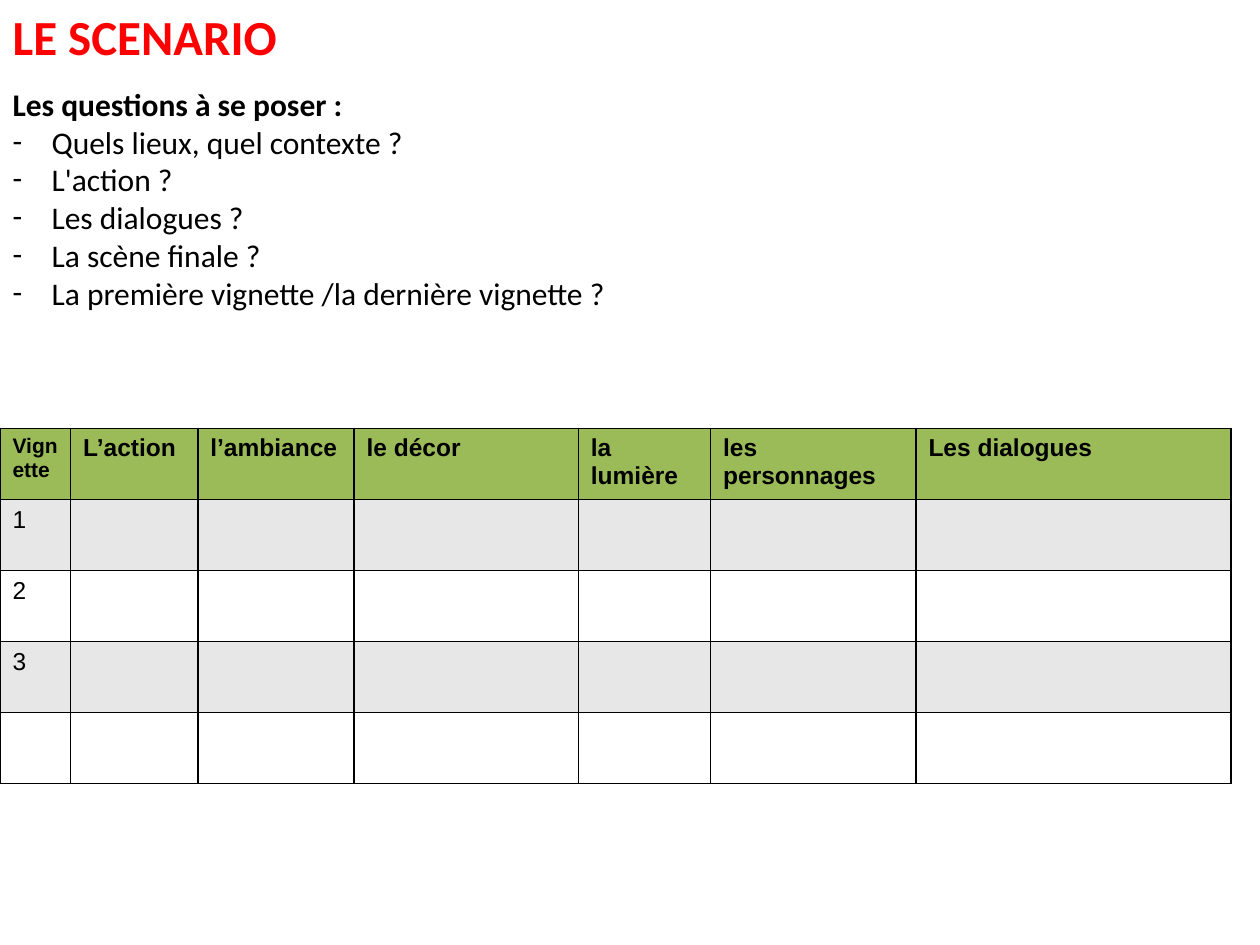
from dataclasses import dataclass

from lxml.etree import SubElement
from pptx import Presentation
from pptx.dml.color import RGBColor
from pptx.enum.text import MSO_ANCHOR, MSO_AUTO_SIZE, PP_ALIGN
from pptx.oxml.ns import qn
from pptx.util import Inches, Pt


@dataclass(frozen=True)
class Theme:
    title_color: str = "FF0000"
    ink: str = "000000"
    header_fill: str = "9BBB59"
    band_fills: tuple = ("E7E7E7", "FFFFFF")
    text_font: str = "Calibri"
    table_font: str = "Arial"
    title_size: int = 28
    body_size: int = 18
    header_size: int = 14
    narrow_header_size: int = 12
    border_width: int = 1


THEME = Theme()
SLIDE_WIDTH, SLIDE_HEIGHT = Inches(10), Inches(7.5)
HANGING_INDENT = Inches(0.31)

QUESTIONS_HEADING = "Les questions à se poser :"
QUESTIONS = [
    "Quels lieux, quel contexte ?",
    "L'action ?",
    "Les dialogues ?",
    "La scène finale ?",
    "La première vignette /la dernière vignette ?",
]
STORYBOARD_COLUMNS = {
    "Vignette": 0.56,
    "L’action": 1.01,
    "l’ambiance": 1.24,
    "le décor": 1.78,
    "la lumière": 1.05,
    "les personnages": 1.63,
    "Les dialogues": 2.5,
}
VIGNETTE_LABELS = ["1", "2", "3", ""]


def set_values(target, values):
    for attribute, value in values.items():
        setattr(target, attribute, value)


def place(placeholder, left, top, width, height):
    set_values(placeholder, {
        "left": int(left * SLIDE_WIDTH),
        "top": int(top * SLIDE_HEIGHT),
        "width": int(width * SLIDE_WIDTH),
        "height": int(height * SLIDE_HEIGHT),
    })
    set_values(placeholder.text_frame, {
        "word_wrap": True,
        "auto_size": MSO_AUTO_SIZE.NONE,
        "vertical_anchor": MSO_ANCHOR.TOP,
    })


def write(paragraph, text, font, size, color, bold=False):
    set_values(paragraph, {
        "alignment": PP_ALIGN.LEFT,
        "space_before": Pt(0),
        "line_spacing": 1.0,
    })
    run = paragraph.add_run()
    run.text = text
    set_values(run.font, {"name": font, "size": Pt(size), "bold": bold})
    run.font.color.rgb = RGBColor.from_string(color)


def set_bullet(paragraph, mark=None):
    properties = paragraph._p.get_or_add_pPr()
    indent = HANGING_INDENT if mark else 0
    properties.set("marL", str(indent))
    properties.set("indent", str(-indent))
    if mark:
        SubElement(properties, qn("a:buFont"), typeface=THEME.text_font)
        SubElement(properties, qn("a:buChar"), char=mark)
    else:
        SubElement(properties, qn("a:buNone"))


def add_title(slide):
    title = slide.shapes.title
    place(title, 0, 0, 0.343, 0.076)
    write(title.text_frame.paragraphs[0], "LE SCENARIO", THEME.text_font,
          THEME.title_size, THEME.title_color, bold=True)


def add_questions(slide):
    questions = slide.placeholders[1]
    place(questions, 0, 0.083, 0.971, 0.256)
    frame = questions.text_frame
    heading = frame.paragraphs[0]
    set_bullet(heading)
    write(heading, QUESTIONS_HEADING, THEME.text_font, THEME.body_size,
          THEME.ink, bold=True)
    for question in QUESTIONS:
        item = frame.add_paragraph()
        set_bullet(item, "-")
        write(item, question, THEME.text_font, THEME.body_size, THEME.ink)


def format_cell(cell, fill):
    properties = cell._tc.get_or_add_tcPr()
    for side in ("lnL", "lnR", "lnT", "lnB"):
        border = SubElement(properties, qn(f"a:{side}"),
                            w=str(Pt(THEME.border_width)))
        paint = SubElement(border, qn("a:solidFill"))
        SubElement(paint, qn("a:srgbClr"), val=THEME.ink)
    cell.fill.solid()
    cell.fill.fore_color.rgb = RGBColor.from_string(fill)


def add_storyboard(slide):
    widths = [Inches(width) for width in STORYBOARD_COLUMNS.values()]
    row_count = len(VIGNETTE_LABELS) + 1
    storyboard = slide.shapes.add_table(
        row_count, len(widths), 0, Inches(3.4), sum(widths), Inches(2.82)
    ).table
    for column, width in zip(storyboard.columns, widths):
        column.width = width
    fills = [THEME.header_fill] + [
        THEME.band_fills[index % 2] for index in range(len(VIGNETTE_LABELS))
    ]
    for row, fill in zip(storyboard.rows, fills):
        for cell in row.cells:
            format_cell(cell, fill)
    for index, heading in enumerate(STORYBOARD_COLUMNS):
        size = THEME.header_size if index else THEME.narrow_header_size
        write(storyboard.cell(0, index).text_frame.paragraphs[0], heading,
              THEME.table_font, size, THEME.ink, bold=True)
    for index, label in enumerate(VIGNETTE_LABELS, start=1):
        if label:
            write(storyboard.cell(index, 0).text_frame.paragraphs[0], label,
                  THEME.table_font, THEME.header_size, THEME.ink)


def main():
    presentation = Presentation()
    set_values(presentation, {"slide_width": SLIDE_WIDTH,
                              "slide_height": SLIDE_HEIGHT})
    slide = presentation.slides.add_slide(presentation.slide_layouts[1])
    add_title(slide)
    add_storyboard(slide)
    add_questions(slide)
    presentation.save("out.pptx")


if __name__ == "__main__":
    main()
